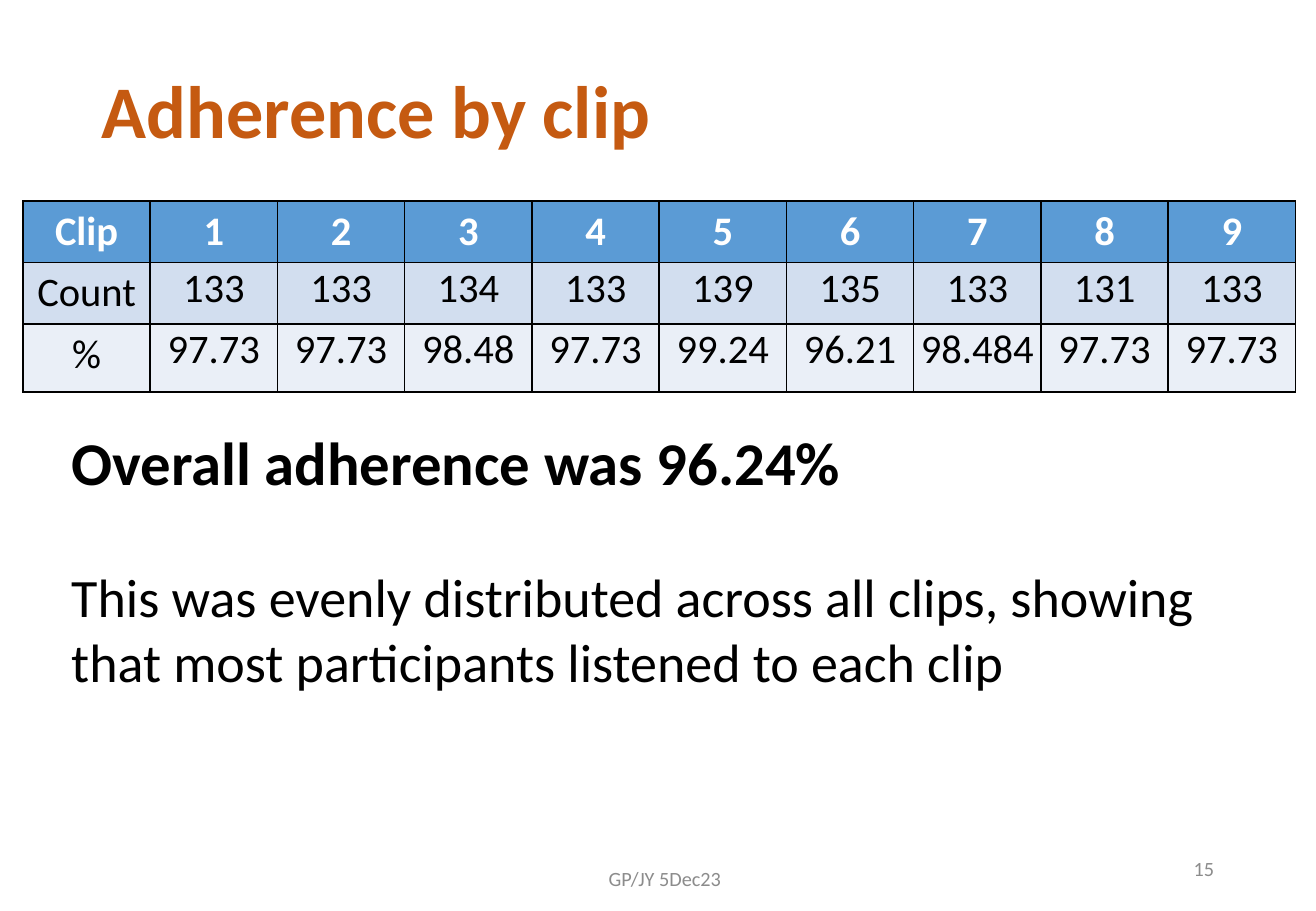
from dataclasses import dataclass

from lxml import etree
from pptx import Presentation
from pptx.dml.color import RGBColor
from pptx.enum.text import MSO_ANCHOR, MSO_AUTO_SIZE, PP_ALIGN
from pptx.oxml.ns import qn
from pptx.slide import Slide
from pptx.table import _Cell
from pptx.util import Cm, Pt

LEFT, CENTER, RIGHT = PP_ALIGN.LEFT, PP_ALIGN.CENTER, PP_ALIGN.RIGHT
TOP, MIDDLE = MSO_ANCHOR.TOP, MSO_ANCHOR.MIDDLE
NO_FIT = MSO_AUTO_SIZE.NONE

FONT = "Calibri"
ORANGE = RGBColor(0xC5, 0x5A, 0x11)
GRAY = RGBColor(0x8C, 0x8C, 0x8C)
BLACK = RGBColor(0x00, 0x00, 0x00)
WHITE = RGBColor(0xFF, 0xFF, 0xFF)
BLUE = RGBColor(0x5B, 0x9B, 0xD5)
LIGHT_BLUE = RGBColor(0xD2, 0xDE, 0xEF)
PALE_BLUE = RGBColor(0xEA, 0xEF, 0xF7)

COLUMN_WIDTH = 2.66


@dataclass(frozen=True)
class Para:
    text: str
    size: float
    color: RGBColor = BLACK
    bold: bool = False
    align: PP_ALIGN = LEFT
    line_spacing: float = 1.0
    space_before: float = 0


@dataclass(frozen=True)
class TextBlock:
    left: float
    top: float
    width: float
    height: float
    paras: tuple[Para, ...]
    anchor: MSO_ANCHOR = MIDDLE


@dataclass(frozen=True)
class TableRow:
    height: float
    values: tuple[str, ...]
    fill: RGBColor
    color: RGBColor = BLACK
    bold: bool = False
    tight: bool = True


TEXT_BLOCKS = (
    TextBlock(1.88, 1.09, 23.72, 2.59,
              (Para("Adherence by clip", 44, ORANGE, True, line_spacing=0.9),)),
    TextBlock(1.24, 8.76, 25.27, 5.89, (
        Para("Overall adherence was 96.24%", 36, bold=True),
        Para("This was evenly distributed across all clips, showing that most "
             "participants listened to each clip", 32, space_before=39),
    ), TOP),
    TextBlock(9.25, 17.86, 9.3, 1.02,
              (Para("GP/JY 5Dec23", 12, GRAY, align=CENTER),)),
    TextBlock(19.43, 17.65, 6.2, 1.02,
              (Para("15", 12, GRAY, align=RIGHT),)),
)

TABLE_ROWS = (
    TableRow(1.27, ("Clip", *(str(n) for n in range(1, 10))),
             BLUE, WHITE, bold=True, tight=False),
    TableRow(1.27, ("Count", "133", "133", "134", "133", "139", "135", "133",
                    "131", "133"), LIGHT_BLUE),
    TableRow(1.42, ("%", "97.73", "97.73", "98.48", "97.73", "99.24", "96.21",
                    "98.484", "97.73", "97.73"), PALE_BLUE),
)


def write_para(p, para: Para) -> None:
    p.text = para.text
    p.alignment = para.align
    p.line_spacing = para.line_spacing
    p.space_before = Pt(para.space_before)
    for r in p.runs:
        r.font.name = FONT
        r.font.size = Pt(para.size)
        r.font.bold = para.bold
        r.font.color.rgb = para.color


def add_text_block(slide: Slide, block: TextBlock) -> None:
    sp = slide.shapes.add_textbox(Cm(block.left), Cm(block.top),
                                  Cm(block.width), Cm(block.height))
    tf = sp.text_frame
    tf.word_wrap = True
    tf.auto_size = NO_FIT
    tf.vertical_anchor = block.anchor
    for i, para in enumerate(block.paras):
        p = tf.add_paragraph() if i else tf.paragraphs[0]
        write_para(p, para)


def add_borders(cell: _Cell) -> None:
    tc_pr = cell._tc.get_or_add_tcPr()
    for side in ("a:lnL", "a:lnR", "a:lnT", "a:lnB"):
        ln = etree.SubElement(tc_pr, qn(side), w=str(Pt(1)))
        fill = etree.SubElement(ln, qn("a:solidFill"))
        etree.SubElement(fill, qn("a:srgbClr"), val=str(BLACK))


def add_clip_table(slide: Slide, rows: tuple[TableRow, ...]) -> None:
    n_cols = len(rows[0].values)
    table = slide.shapes.add_table(
        len(rows), n_cols, Cm(0.48), Cm(4.2), Cm(COLUMN_WIDTH * n_cols),
        Cm(sum(row.height for row in rows))).table
    for column in table.columns:
        column.width = Cm(COLUMN_WIDTH)
    for i, row in enumerate(rows):
        table.rows[i].height = Cm(row.height)
        for j, value in enumerate(row.values):
            cell = table.cell(i, j)
            add_borders(cell)
            cell.fill.solid()
            cell.fill.fore_color.rgb = row.fill
            if row.tight and j:
                cell.margin_left = cell.margin_right = cell.margin_top = Cm(0.03)
            write_para(cell.text_frame.paragraphs[0],
                       Para(value, 24, row.color, row.bold, CENTER))


def main() -> None:
    prs = Presentation()
    prs.slide_width, prs.slide_height = Cm(27.51), Cm(19.05)
    slide = prs.slides.add_slide(prs.slide_layouts[6])
    for block in TEXT_BLOCKS:
        add_text_block(slide, block)
    add_clip_table(slide, TABLE_ROWS)
    prs.save("out.pptx")


if __name__ == "__main__":
    main()
